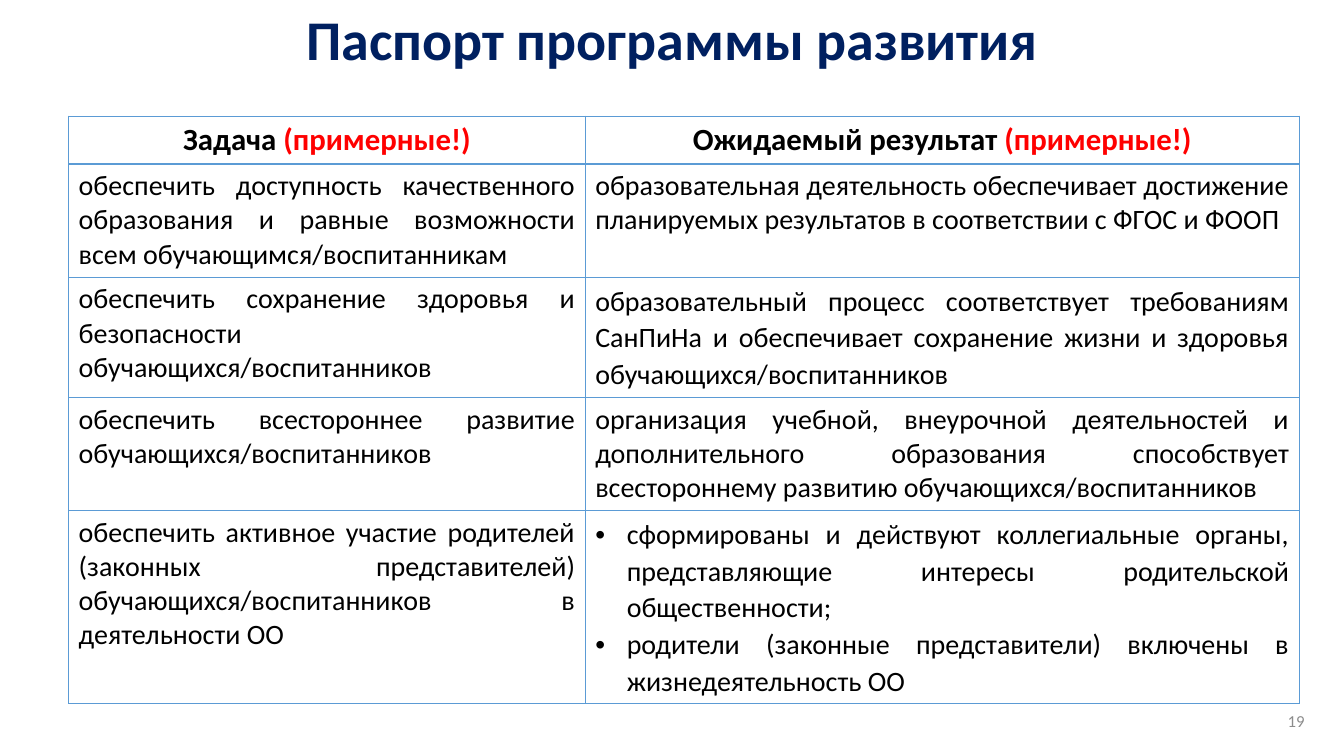
from lxml import etree
from pptx import Presentation
from pptx.dml.color import RGBColor
from pptx.enum.text import MSO_ANCHOR as Anchor, MSO_AUTO_SIZE as AutoSize, PP_ALIGN as Align
from pptx.oxml.ns import qn
from pptx.util import Pt

FONT = "Calibri"
NAVY = RGBColor(0x00, 0x20, 0x60)
BLACK = RGBColor(0x00, 0x00, 0x00)
RED = RGBColor(0xFF, 0x00, 0x00)
BLUE = RGBColor(0x5B, 0x9B, 0xD5)
GREY = RGBColor(0x8C, 0x8C, 0x8C)

BULLET_INDENT = 22.5
LOOSE = 1.07
COLUMN_WIDTHS = (369, 510)
ROW_HEIGHTS = (21, 81, 80, 75, 127)
HEADINGS = ("Задача ", "Ожидаемый результат ")
HEADING_NOTE = "(примерные!)"

# Each row: task, expected results, line spacing of the results
GOALS = (
    ("обеспечить доступность качественного образования и равные возможности "
     "всем обучающимся/воспитанникам",
     ("образовательная деятельность обеспечивает достижение планируемых "
      "результатов в соответствии с ФГОС и ФООП",), None),
    ("обеспечить сохранение здоровья и безопасности обучающихся/воспитанников",
     ("образовательный процесс соответствует требованиям СанПиНа и обеспечивает "
      "сохранение жизни и здоровья обучающихся/воспитанников",), LOOSE),
    ("обеспечить всестороннее развитие обучающихся/воспитанников",
     ("организация учебной, внеурочной деятельностей и дополнительного образования "
      "способствует всестороннему развитию обучающихся/воспитанников",), None),
    ("обеспечить активное участие родителей (законных представителей) "
     "обучающихся/воспитанников в деятельности ОО",
     ("сформированы и действуют коллегиальные органы, представляющие интересы "
      "родительской общественности;",
      "родители (законные представители) включены в жизнедеятельность ОО"), LOOSE),
)


def format_font(font, size, color, bold=False):
    font.name = FONT
    font.size = Pt(size)
    font.bold = bold
    font.color.rgb = color


def add_bullet(paragraph):
    properties = paragraph._p.get_or_add_pPr()
    properties.set("marL", str(Pt(BULLET_INDENT)))
    properties.set("indent", str(-Pt(BULLET_INDENT)))
    etree.SubElement(properties, qn("a:buFont")).set("typeface", "Arial")
    etree.SubElement(properties, qn("a:buChar")).set("char", "•")


def format_cell(cell, top, bottom):
    """Draw the cell's borders, with top and bottom widths in points, and clear its fill."""
    properties = cell._tc.get_or_add_tcPr()
    for side, width in (("L", 1), ("R", 1), ("T", top), ("B", bottom)):
        line = etree.SubElement(properties, qn(f"a:ln{side}"), w=str(Pt(width)))
        fill = etree.SubElement(line, qn("a:solidFill"))
        etree.SubElement(fill, qn("a:srgbClr")).set("val", str(BLUE))
    cell.fill.background()


def fill_heading(cell, heading):
    paragraph = cell.text_frame.paragraphs[0]
    paragraph.alignment = Align.CENTER
    for text, color in ((heading, BLACK), (HEADING_NOTE, RED)):
        run = paragraph.add_run()
        run.text = text
        format_font(run.font, 22, color, bold=True)


def fill_body(cell, texts, spacing=None):
    """Write justified paragraphs, bulleted when there are several."""
    cell.text_frame.text = "\n".join(texts)
    for paragraph in cell.text_frame.paragraphs:
        paragraph.alignment = Align.JUSTIFY
        if spacing:
            paragraph.line_spacing = spacing
        if len(texts) > 1:
            add_bullet(paragraph)
        format_font(paragraph.runs[0].font, 20, BLACK)


def place_title(slide, left, top, width, height):
    title = slide.shapes.title
    title.left, title.top, title.width, title.height = map(Pt, (left, top, width, height))
    frame = title.text_frame
    frame.text = "Паспорт программы развития"
    frame.auto_size = AutoSize.NONE
    frame.vertical_anchor = Anchor.MIDDLE
    paragraph = frame.paragraphs[0]
    paragraph.alignment = Align.CENTER
    paragraph.line_spacing = 0.9
    format_font(paragraph.runs[0].font, 40, NAVY, bold=True)


def add_goals_table(slide, left, top):
    table = slide.shapes.add_table(
        len(ROW_HEIGHTS), len(COLUMN_WIDTHS), Pt(left), Pt(top),
        Pt(sum(COLUMN_WIDTHS)), Pt(sum(ROW_HEIGHTS))).table
    table.first_row = table.horz_banding = False
    for column, width in zip(table.columns, COLUMN_WIDTHS):
        column.width = Pt(width)
    for index, height in enumerate(ROW_HEIGHTS):
        table.rows[index].height = Pt(height)
        for cell in table.rows[index].cells:
            format_cell(cell, 2 if index == 1 else 1, 2 if index == 0 else 1)
    for column, heading in enumerate(HEADINGS):
        fill_heading(table.cell(0, column), heading)
    for row, (task, results, spacing) in enumerate(GOALS, start=1):
        fill_body(table.cell(row, 0), (task,))
        fill_body(table.cell(row, 1), results, spacing)


def add_page_number(slide, left, top, width, height):
    frame = slide.shapes.add_textbox(Pt(left), Pt(top), Pt(width), Pt(height)).text_frame
    frame.word_wrap = True
    frame.vertical_anchor = Anchor.MIDDLE
    frame.text = "19"
    paragraph = frame.paragraphs[0]
    paragraph.alignment = Align.RIGHT
    format_font(paragraph.runs[0].font, 12, GREY)


def main():
    presentation = Presentation()
    presentation.slide_width, presentation.slide_height = Pt(960), Pt(540)
    slide = presentation.slides.add_slide(presentation.slide_layouts[5])
    place_title(slide, 66, 0, 828, 60)
    add_goals_table(slide, 49, 83)
    add_page_number(slide, 775, 500.5, 164, 28.5)
    presentation.save("out.pptx")


if __name__ == "__main__":
    main()
